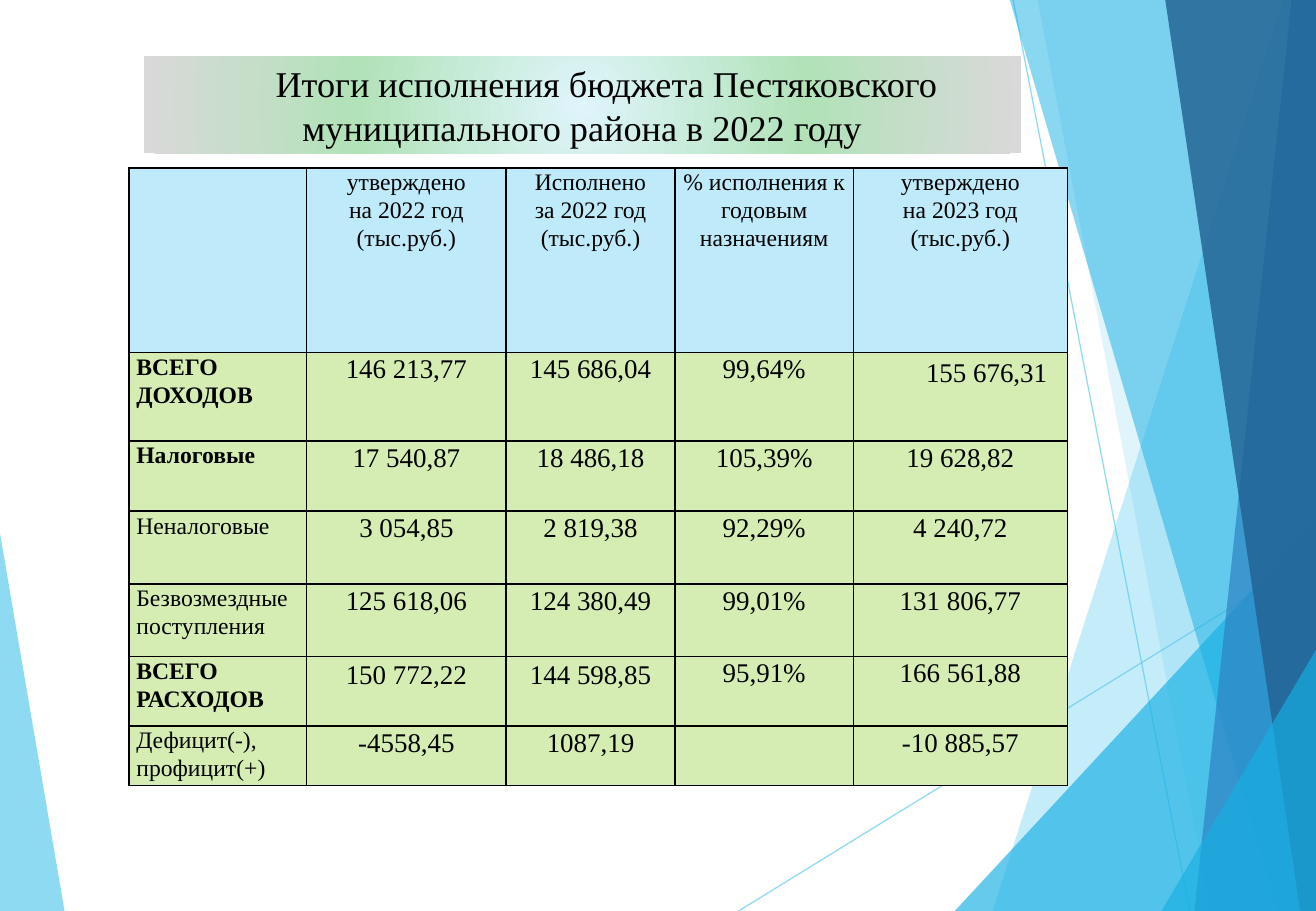
from lxml import etree
from pptx import Presentation
from pptx.dml import color
from pptx.enum import shapes, text
from pptx.oxml import ns, parse_xml
from pptx.util import Cm, Pt

FONT = "Times New Roman"
WIDTH, HEIGHT = 27.51, 19.05
HEADER_FILL, BODY_FILL = "BFEAF9", "D5EDB3"

COLUMN_WIDTHS = [3.71, 4.17, 3.53, 3.73, 4.47]
ROW_HEIGHTS = [3.86, 1.85, 1.47, 1.52, 1.52, 1.45, 1.24]
ROWS = [
    ["", "утверждено\nна 2022 год\n(тыс.руб.)", "Исполнено\nза 2022 год\n(тыс.руб.)",
     "% исполнения к годовым назначениям", "утверждено\nна 2023 год\n(тыс.руб.)"],
    ["ВСЕГО ДОХОДОВ", "146 213,77", "145 686,04", "99,64%", "155 676,31"],
    ["Налоговые", "17 540,87", "18 486,18", "105,39%", "19 628,82"],
    ["Неналоговые", "3 054,85", "2 819,38", "92,29%", "4 240,72"],
    ["Безвозмездные поступления", "125 618,06", "124 380,49", "99,01%", "131 806,77"],
    ["ВСЕГО РАСХОДОВ", "150 772,22", "144 598,85", "95,91%", "166 561,88"],
    ["Дефицит(-), профицит(+)", "-4558,45", "1087,19", "", "-10 885,57"],
]
BOLD_LABELS = {"ВСЕГО ДОХОДОВ", "Налоговые", "ВСЕГО РАСХОДОВ"}
# Cells set slightly lower than their row: (row, column) -> top margin
TOP_MARGINS = {(1, 4): 0.08, (5, 1): 0.04, (5, 2): 0.04}


def rgb(value):
    return color.RGBColor.from_string(value)


def set_opacity(shape, percent):
    for tint in shape._element.iter(ns.qn("a:srgbClr")):
        etree.SubElement(tint, ns.qn("a:alpha")).set("val", str(percent * 1000))


def write(frame, content, size=14, bold=False, align=text.PP_ALIGN.CENTER,
          spacing=None, indent=0):
    """Fill a text frame, one paragraph for each line of content."""
    for index, line in enumerate(content.split("\n")):
        para = frame.paragraphs[0] if index == 0 else frame.add_paragraph()
        para.alignment = align
        if spacing:
            para.line_spacing = spacing
        if indent:
            properties = para._p.get_or_add_pPr()
            properties.set("marL", "0")
            properties.set("indent", str(Cm(indent)))
        span = para.add_run()
        span.text = line
        span.font.name = FONT
        span.font.size = Pt(size)
        span.font.bold = bold
        span.font.color.rgb = rgb("000000")


def add_facet(page, points, fill, opacity):
    corners = [(Cm(x), Cm(y)) for x, y in points]
    builder = page.shapes.build_freeform(*corners[0])
    builder.add_line_segments(corners[1:], close=True)
    facet = builder.convert_to_shape()
    facet.shadow.inherit = False
    facet.fill.solid()
    facet.fill.fore_color.rgb = rgb(fill)
    facet.line.fill.background()
    set_opacity(facet, opacity)


def add_edge_facet(page, top, bottom, fill, opacity):
    """A full-height facet running from a slanted side to the right edge."""
    points = [(top, 0), (bottom, HEIGHT), (WIDTH, HEIGHT), (WIDTH, 0)]
    add_facet(page, points, fill, opacity)


def add_corner_facet(page, left, top, fill, opacity):
    """A triangle in the bottom right corner."""
    points = [(left, HEIGHT), (WIDTH, top), (WIDTH, HEIGHT)]
    add_facet(page, points, fill, opacity)


def add_ray(page, start, end):
    ray = page.shapes.add_connector(
        shapes.MSO_CONNECTOR.STRAIGHT, *[Cm(v) for v in start + end])
    ray.line.color.rgb = rgb("5FCBEF")
    ray.line.width = Pt(0.75)
    set_opacity(ray, 70)
    etree.SubElement(ray._element.spPr, ns.qn("a:effectLst"))


def add_backdrop(page):
    add_facet(page, [(0, 11.15), (1.35, HEIGHT), (0, HEIGHT)], "5FCBEF", 70)
    add_ray(page, (15.44, HEIGHT), (WIDTH, 11.61))
    add_ray(page, (21.18, 0), (24.87, HEIGHT))
    add_edge_facet(page, 26.82, 20.75, "5FCBEF", 36)
    add_edge_facet(page, 21.69, 25.3, "5FCBEF", 20)
    add_corner_facet(page, 19.96, 10.9, "17B0E4", 66)
    add_edge_facet(page, 21.11, 26.7, "17B0E4", 50)
    add_edge_facet(page, 27, 24.97, "2E83C3", 70)
    add_edge_facet(page, 24.36, 27.18, "226292", 82)
    add_corner_facet(page, 24.28, 13.59, "17B0E4", 66)


def radial_gradient(stops):
    marks = "".join(
        f'<a:gs pos="{position * 1000}"><a:srgbClr val="{tint}"/></a:gs>'
        for position, tint in stops)
    return parse_xml(
        f'<a:gradFill {ns.nsdecls("a")} rotWithShape="1"><a:gsLst>{marks}</a:gsLst>'
        '<a:path path="circle"><a:fillToRect l="50000" t="50000" r="50000" b="50000"/>'
        '</a:path></a:gradFill>')


def format_title(page):
    title = page.shapes.title
    title.left, title.top, title.width, title.height = Cm(3), Cm(1.18), Cm(18.34), Cm(2.03)
    title._element.spPr.append(
        radial_gradient([(0, "DFF5FC"), (51, "B1E2B8"), (100, "D9D9D9")]))
    frame = title.text_frame
    frame.word_wrap = True
    frame.auto_size = text.MSO_AUTO_SIZE.NONE
    frame.vertical_anchor = text.MSO_ANCHOR.MIDDLE
    frame.margin_left = frame.margin_right = Cm(0.2)
    frame.margin_top = frame.margin_bottom = Cm(0.1)
    write(frame, "Итоги исполнения бюджета Пестяковского муниципального района в 2022 году",
          size=21.5, indent=1.02)


def format_cell(cell, fill, top):
    properties = cell._tc.get_or_add_tcPr()
    for side in ("lnL", "lnR", "lnT", "lnB"):
        properties.append(parse_xml(
            f'<a:{side} {ns.nsdecls("a")} w="{Pt(1)}"><a:solidFill>'
            f'<a:srgbClr val="000000"/></a:solidFill></a:{side}>'))
    cell.fill.solid()
    cell.fill.fore_color.rgb = rgb(fill)
    cell.margin_left = cell.margin_right = Cm(0.15)
    cell.margin_top, cell.margin_bottom = Cm(top), 0


def add_budget_table(page):
    frame = page.shapes.add_table(
        len(ROWS), len(COLUMN_WIDTHS), Cm(2.7), Cm(3.51),
        Cm(sum(COLUMN_WIDTHS)), Cm(sum(ROW_HEIGHTS)))
    table = frame.table
    table.first_row = table.horz_banding = False
    for column, width in zip(table.columns, COLUMN_WIDTHS):
        column.width = Cm(width)
    for row, height in zip(table.rows, ROW_HEIGHTS):
        row.height = Cm(height)
    for r, values in enumerate(ROWS):
        for c, value in enumerate(values):
            cell = table.cell(r, c)
            format_cell(cell, BODY_FILL if r else HEADER_FILL, TOP_MARGINS.get((r, c), 0))
            if value:
                write(cell.text_frame, value,
                      size=16 if r and c else 14,
                      bold=value in BOLD_LABELS,
                      align=text.PP_ALIGN.CENTER if c else text.PP_ALIGN.LEFT,
                      spacing=1.07,
                      indent=1.1 if (r, c) == (1, 4) else 0)


def main():
    deck = Presentation()
    deck.slide_width, deck.slide_height = Cm(WIDTH), Cm(HEIGHT)
    page = deck.slides.add_slide(deck.slide_layouts[5])
    # Decorative facets
    add_backdrop(page)
    # Heading and figures
    format_title(page)
    add_budget_table(page)
    deck.save("out.pptx")


if __name__ == "__main__":
    main()
